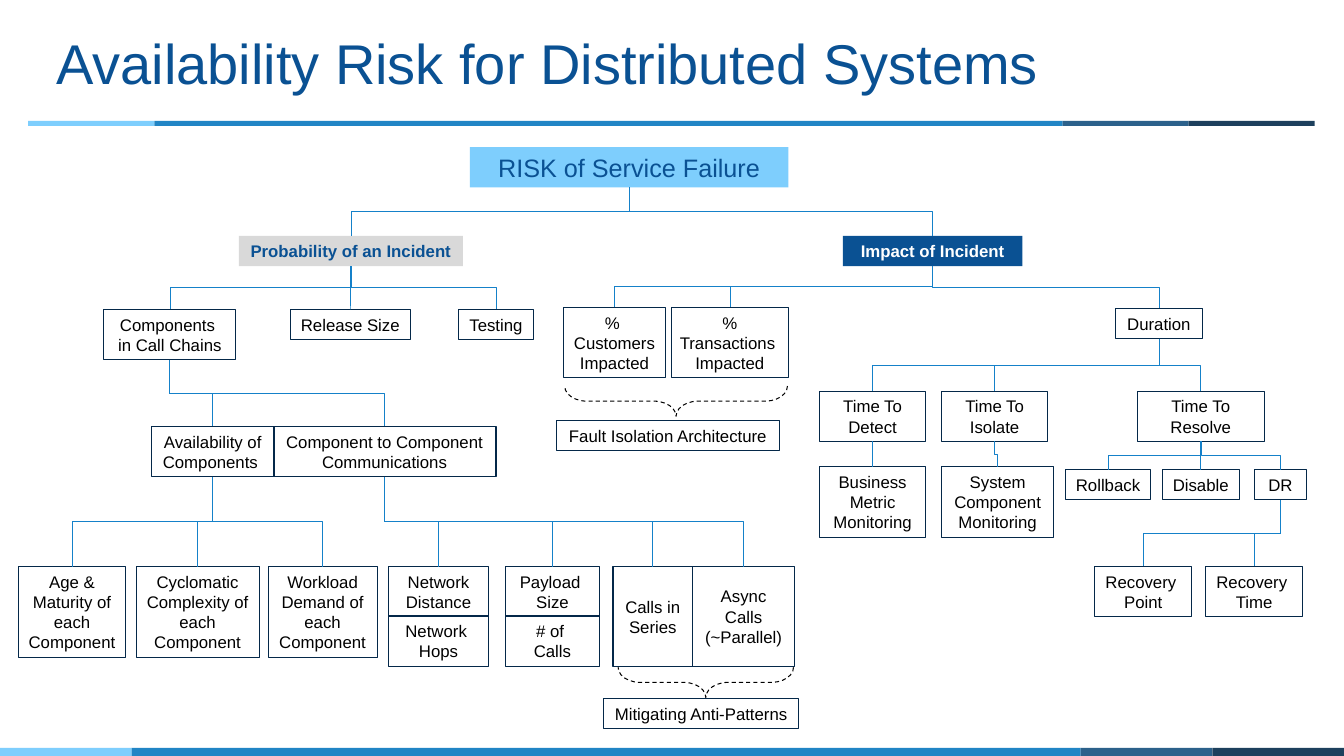
"""Build the availability risk tree slide."""
from lxml import etree
from pptx import Presentation
from pptx.dml.color import RGBColor
from pptx.enum.dml import MSO_LINE
from pptx.enum.shapes import MSO_CONNECTOR, MSO_SHAPE
from pptx.enum.text import MSO_ANCHOR, PP_ALIGN
from pptx.oxml.ns import qn
from pptx.util import Inches, Pt

RECT, BRACE = MSO_SHAPE.RECTANGLE, MSO_SHAPE.RIGHT_BRACE
ELBOW, STRAIGHT = MSO_CONNECTOR.ELBOW, MSO_CONNECTOR.STRAIGHT
MIDDLE, CENTER, DASH = MSO_ANCHOR.MIDDLE, PP_ALIGN.CENTER, MSO_LINE.DASH

BLACK = RGBColor(0x00, 0x00, 0x00)
WHITE = RGBColor(0xFF, 0xFF, 0xFF)
NAVY = RGBColor(0x0A, 0x51, 0x93)
EDGE = RGBColor(0x04, 0x28, 0x49)
WIRE = RGBColor(0x15, 0x81, 0xC9)
GREY = RGBColor(0xD9, 0xD9, 0xD9)
SKY = RGBColor(0x7E, 0xCE, 0xFD)
BLUE = RGBColor(0x21, 0x85, 0xC5)
STEEL = RGBColor(0x2C, 0x61, 0x8B)
DEEP = RGBColor(0x1D, 0x40, 0x5D)

WIDE, HIGH = 13.33, 7.5
FONT = "Arial"
PAD, ROW = 0.1, 0.2
TITLE = "Availability Risk for Distributed Systems"

# Each bar: left, top, width, height
BARS = [(0.28, 1.2, 12.76, 0.05), (0, 7.42, WIDE, 0.09)]
PARTS = [(0.098, SKY), (0.706, BLUE), (0.098, STEEL), (0.098, DEEP)]

# Each level: top, text rows, parent, boxes as (key, text, left, width)
LEVELS = [
    (1.46, 1.5, None, [("risk", "RISK of Service Failure", 4.66, 3.16)]),
    (2.34, 1.5, "risk", [
        ("odds", "Probability of an Incident", 2.37, 2.22),
        ("impact", "Impact of Incident", 8.36, 1.78)]),
    (3.07, 1, "odds", [
        ("size", "Release Size", 2.88, 1.19),
        ("test", "Testing", 4.55, 0.74)]),
    (3.07, 2, "odds", [
        ("chain", "Components \vin Call Chains", 1.03, 1.31)]),
    (3.05, 3, "impact", [
        ("users", "% \vCustomers\nImpacted", 5.59, 1.01),
        ("trades", "%\vTransactions \nImpacted", 6.66, 1.16)]),
    (3.06, 1, "impact", [("span", "Duration", 11.06, 0.87)]),
    (3.88, 2, "span", [
        ("detect", "Time To Detect", 8.13, 1.05),
        ("isolate", "Time To Isolate", 9.34, 1.05),
        ("resolve", "Time To Resolve", 11.28, 1.26)]),
    (4.17, 1, None, [("fault", "Fault Isolation Architecture", 5.52, 2.21)]),
    (4.23, 2, "chain", [
        ("avail", "Availability of Components ", 1.5, 1.22),
        ("comms", "Component to Component Communications", 2.71, 2.21)]),
    (4.63, 3, "detect", [
        ("metric", "Business Metric Monitoring", 8.13, 1.05)]),
    (4.63, 3, "isolate", [
        ("system", "System Component Monitoring", 9.34, 1.11)]),
    (4.66, 1, "resolve", [
        ("back", "Rollback", 10.57, 0.84),
        ("off", "Disable", 11.53, 0.76),
        ("dr", "DR", 12.44, 0.52)]),
    (5.62, 4, "avail", [
        ("age", "Age & Maturity of each Component", 0.18, 1.07),
        ("cyclo", "Cyclomatic Complexity of each Component", 1.35, 1.22),
        ("load", "Workload Demand of each Component", 2.66, 1.08)]),
    (5.62, 2, "comms", [
        ("far", "Network Distance", 3.85, 1),
        ("pay", "Payload \vSize", 5.01, 0.94)]),
    (5.62, 4.45, "comms", [
        ("series", "Calls in Series", 6.08, 0.79),
        ("async", "Async Calls (~Parallel)", 6.87, 1.01)]),
    (5.62, 2, "dr", [
        ("point", "Recovery \vPoint", 10.86, 0.96),
        ("time", "Recovery \vTime", 11.96, 0.96)]),
    (6.11, 2, None, [
        ("hops", "Network \vHops", 3.85, 1),
        ("calls", "# of \vCalls", 5.01, 0.94)]),
    (6.93, 1, None, [("cure", "Mitigating Anti-Patterns", 5.99, 1.93)]),
]
# Fill, font colour, size, bold, text rows
LOOKS = {
    "risk": (SKY, NAVY, 18, False, 1.5),
    "odds": (GREY, NAVY, 12, True, 1),
    "impact": (NAVY, WHITE, 12, True, 1),
}
# Each brace: left, top, width
BRACES = [(5.6, 3.83, 2.21), (6.13, 6.62, 1.74)]
DEPTH = 0.3


def add_form(slide, kind, left, top, width, height, fill=None, edge=None):
    form = slide.shapes.add_shape(
        kind, *map(Inches, (left, top, width, height)))
    form.shadow.inherit = False
    if fill is None:
        form.fill.background()
    else:
        form.fill.solid()
        form.fill.fore_color.rgb = fill
    if edge is None:
        form.line.fill.background()
    else:
        form.line.color.rgb = edge
        form.line.width = Pt(0.75)
    return form


def add_title(slide):
    box = slide.shapes.add_textbox(*map(Inches, (0.46, 0.05, 11.5, 1.22)))
    frame = box.text_frame
    frame.word_wrap = True
    frame.vertical_anchor = MIDDLE
    frame.text = TITLE
    para = frame.paragraphs[0]
    para.line_spacing = 0.9
    set_font(para.font, NAVY, 40, False)


def set_font(font, color, size, bold):
    font.name, font.size, font.bold = FONT, Pt(size), bold
    font.color.rgb = color


def add_box(slide, key, text, left, top, width, rows):
    fill, color, size, bold, rows = LOOKS.get(
        key, (None, BLACK, 12, False, rows))
    edge = None if key in LOOKS else EDGE
    box = add_form(slide, RECT, left, top, width, PAD + ROW * rows, fill, edge)
    frame = box.text_frame
    frame.word_wrap = rows > 1 and "\v" not in text
    frame.vertical_anchor = MIDDLE
    frame.text = text
    for para in frame.paragraphs:
        para.alignment = CENTER
        set_font(para.font, color, size, bold)
    return box


def add_wire(slide, above, below):
    x1, y1 = above.left + above.width // 2, above.top + above.height
    x2, y2 = below.left + below.width // 2, below.top
    if abs(x2 - x1) < Inches(0.02):
        wire = slide.shapes.add_connector(STRAIGHT, x1, y1, x2, y2)
        wire.begin_connect(above, 2)
        wire.end_connect(below, 0)
    else:
        midx, midy = (x1 + x2) // 2, (y1 + y2) // 2
        half, reach = (y2 - y1) // 2, abs(x2 - x1) // 2
        right = x2 > x1
        if right:
            half = -half
        wire = slide.shapes.add_connector(
            ELBOW, midx - half, midy - reach, midx + half, midy + reach)
        xfrm = wire._element.spPr.find(qn("a:xfrm"))
        xfrm.set("rot", str((270 if right else 90) * 60000))
    wire.line.color.rgb = WIRE
    wire.line.width = Pt(0.5)
    etree.SubElement(wire._element.spPr, qn("a:effectLst"))


def add_brace(slide, left, top, width):
    midx, midy = left + width / 2, top + DEPTH / 2
    brace = add_form(slide, BRACE, midx - DEPTH / 2, midy - width / 2,
                     DEPTH, width, edge=BLACK)
    brace.rotation = 90
    brace.line.dash_style = DASH
    brace.adjustments[0], brace.adjustments[1] = 0.73, 0.5


def main():
    deck = Presentation()
    deck.slide_width, deck.slide_height = Inches(WIDE), Inches(HIGH)
    slide = deck.slides.add_slide(deck.slide_layouts[6])
    for left, top, width, height in BARS:
        for share, color in PARTS:
            add_form(slide, RECT, left, top, share * width, height, color)
            left += share * width
    add_title(slide)
    boxes = {}
    for top, rows, above, items in LEVELS:
        for key, text, left, width in items:
            boxes[key] = add_box(slide, key, text, left, top, width, rows)
            if above:
                add_wire(slide, boxes[above], boxes[key])
    for brace in BRACES:
        add_brace(slide, *brace)
    deck.save("out.pptx")


if __name__ == "__main__":
    main()
